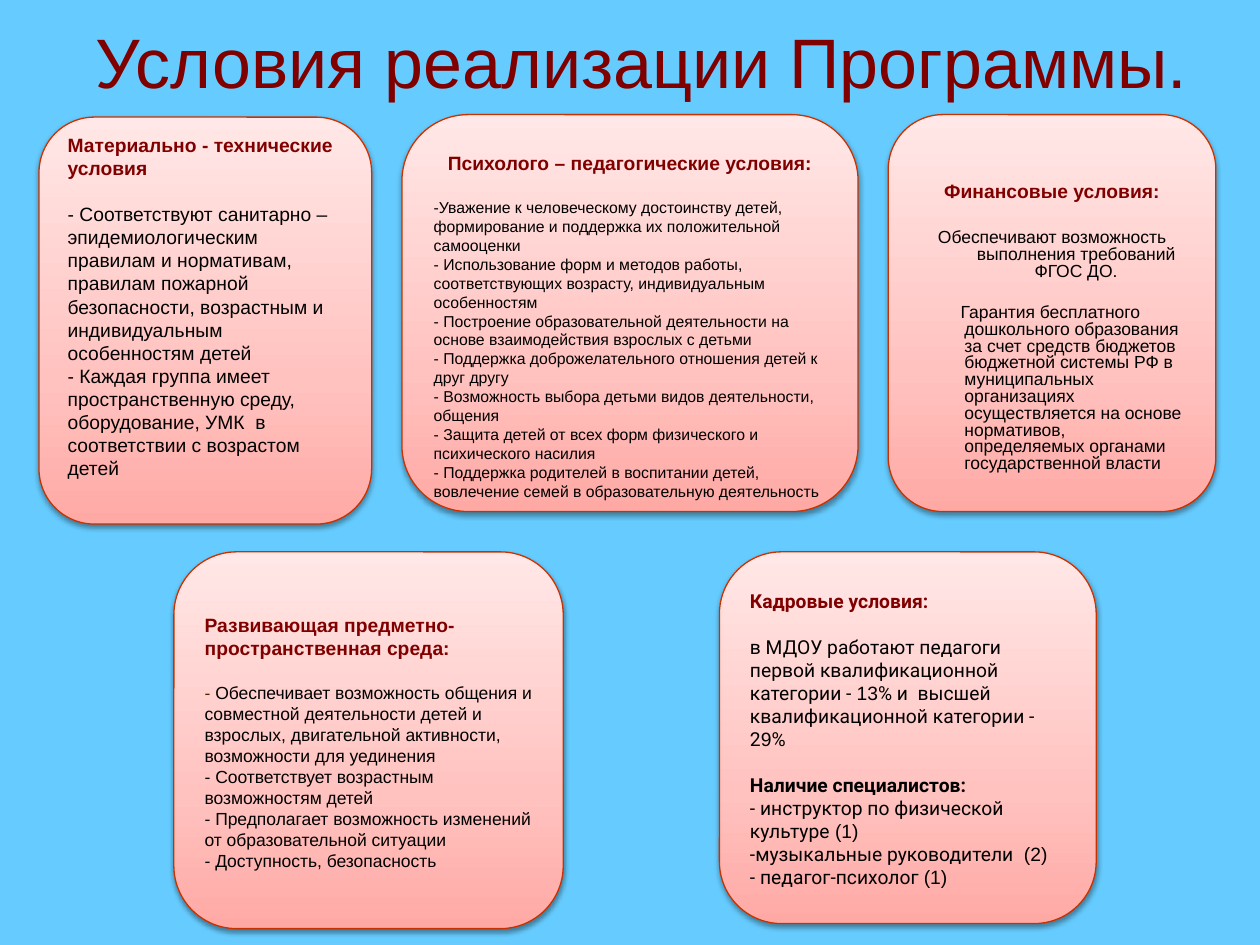
from lxml import etree
from pptx import Presentation
from pptx.dml.color import RGBColor
from pptx.enum import shapes, text
from pptx.oxml import ns
from pptx.util import Inches, Pt

COLORS = {"sky": "66CCFF", "maroon": "800000", "black": "000000", "brown": "5C1F00",
          "border": "C83200"}
GRADIENT = [(0, "FFA9A5"), (35, "FFC2BF"), (100, "FFE8E7")]
LEFT, CENTER = text.PP_ALIGN.LEFT, text.PP_ALIGN.CENTER
HANGING = 0.38


def rgb(name):
    return RGBColor.from_string(COLORS[name])


def add_color(parent, value):
    return etree.SubElement(parent, ns.qn("a:srgbClr"), val=value)


def style_card(s):
    """Apply the pink gradient, thin border and soft shadow."""
    s.fill.gradient()
    s.fill.gradient_angle = 90
    stops = s._element.spPr.find(".//" + ns.qn("a:gsLst"))
    for stop in list(stops):
        stops.remove(stop)
    for pos, value in GRADIENT:
        add_color(etree.SubElement(stops, ns.qn("a:gs"), pos=str(pos * 1000)), value)
    s.line.color.rgb = rgb("border")
    s.line.width = Pt(0.75)
    s.shadow.inherit = False
    effects = s._element.spPr.find(ns.qn("a:effectLst"))
    shadow = etree.SubElement(effects, ns.qn("a:outerShdw"), blurRad=str(Pt(3.1)),
                              dist=str(Pt(1.6)), dir="5400000", rotWithShape="0")
    etree.SubElement(add_color(shadow, COLORS["black"]), ns.qn("a:alpha"), val="38000")


def add_card(slide, box, top_inset):
    """Add a rounded card and return its text frame."""
    s = slide.shapes.add_shape(shapes.MSO_SHAPE.ROUNDED_RECTANGLE, *map(Inches, box))
    style_card(s)
    tf = s.text_frame
    tf.word_wrap = True
    tf.vertical_anchor = text.MSO_ANCHOR.TOP
    tf.margin_top, tf.margin_bottom = Inches(top_inset), 0
    return tf


def add_paragraph(tf, *pieces, size=11, color="black", bold=False, font="Arial",
                  align=LEFT, before=0):
    """Add a paragraph; a piece is a string or (string, other font)."""
    p = tf.paragraphs[0]
    if p.runs:
        p = tf.add_paragraph()
    p.alignment = align
    p.space_before = Pt(before)
    p.font.size, p.font.bold = Pt(size), bold
    p.font.name, p.font.color.rgb = font, rgb(color)
    for piece in pieces:
        words, other = (piece, None) if isinstance(piece, str) else piece
        r = p.add_run()
        r.text = words
        if other:
            r.font.name = other
    return p


def add_heading(tf, words, **style):
    return add_paragraph(tf, words, color="maroon", bold=True, **style)


def add_list(tf, items, size):
    """Add lines of one size, set apart from the heading above."""
    return [add_paragraph(tf, item, size=size, before=0 if i else 13)
            for i, item in enumerate(items)]


def set_hanging(p, first=-HANGING):
    p.line_spacing = 0.8
    pPr = p._p.get_or_add_pPr()
    pPr.set("marL", str(Inches(HANGING)))
    pPr.set("indent", str(Inches(first)))


def add_title(slide):
    s = slide.shapes.add_textbox(*map(Inches, (0.59, 0.21, 9, 0.54)))
    tf = s.text_frame
    tf.word_wrap = True
    tf.vertical_anchor = text.MSO_ANCHOR.MIDDLE
    add_paragraph(tf, "Условия реализации Программы.", size=40, color="maroon", align=CENTER)


def add_material(slide):
    tf = add_card(slide, (0.31, 0.93, 2.64, 3.23), 0)
    add_heading(tf, "Материально - технические условия")
    add_list(tf, [
        "- Соответствуют санитарно – эпидемиологическим правилам и нормативам, правилам "
        "пожарной безопасности, возрастным и индивидуальным особенностям детей",
        "- Каждая группа имеет пространственную среду, оборудование, УМК  в соответствии "
        "с возрастом детей"], 11)


def add_psychological(slide):
    tf = add_card(slide, (3.19, 0.91, 3.62, 3.15), 0.14)
    add_heading(tf, "Психолого – педагогические условия:", align=CENTER)
    add_list(tf, [
        "-Уважение к человеческому достоинству детей, формирование и поддержка их "
        "положительной самооценки",
        "- Использование форм и методов работы, соответствующих возрасту, индивидуальным "
        "особенностям",
        "- Построение образовательной деятельности на основе взаимодействия взрослых с детьми",
        "- Поддержка доброжелательного отношения детей к друг другу",
        "- Возможность выбора детьми видов деятельности, общения",
        "- Защита детей от всех форм физического и психического насилия",
        "- Поддержка родителей в воспитании детей, вовлечение семей в образовательную "
        "деятельность"], 9)


def add_financial(slide):
    tf = add_card(slide, (7.05, 0.91, 2.6, 3.15), 0.42)
    set_hanging(add_heading(tf, "Финансовые условия:", align=CENTER))
    set_hanging(add_paragraph(
        tf, "Обеспечивают возможность выполнения требований ФГОС ДО.",
        size=10, align=CENTER, before=16))
    set_hanging(add_paragraph(
        tf, "Гарантия бесплатного дошкольного образования за счет средств бюджетов бюджетной "
        "системы РФ в муниципальных организациях осуществляется на основе нормативов, "
        "определяемых органами государственной власти", size=10, before=14), first=-0.03)


def add_environment(slide):
    tf = add_card(slide, (1.38, 4.38, 3.09, 2.99), 0.34)
    add_heading(tf, "Развивающая предметно-пространственная среда:")
    first = add_paragraph(
        tf, "- ", "Обеспечивает возможность общения и совместной деятельности детей и взрослых, "
        "двигательной активности, возможности для уединения", size=10, before=13)
    first.runs[0].font.color.rgb = rgb("brown")
    for item in ("- Соответствует возрастным возможностям детей",
                 "- Предполагает возможность изменений от образовательной ситуации",
                 "- Доступность, безопасность"):
        add_paragraph(tf, item, size=10)


def add_staff(slide):
    tf = add_card(slide, (5.71, 4.38, 2.99, 2.95), 0.15)
    add_heading(tf, "Кадровые условия:", font="Roboto")
    add_paragraph(tf, "в МДОУ работают педагоги первой квалификационной категории - ",
                  ("13", "Arial"), "% и  высшей квалификационной категории - 2",
                  ("9", "Arial"), "%", font="Roboto", before=13)
    add_paragraph(tf, "Наличие специалистов:", font="Roboto", bold=True, before=13)
    for role, count in (("- инструктор по физической культуре", " (1)"),
                        ("-музыкальные руководители ", " (2)"),
                        ("- педагог-психолог ", "(1)")):
        add_paragraph(tf, role, (count, "Arial"), font="Roboto")


def main():
    prs = Presentation()
    prs.slide_width, prs.slide_height = Inches(10), Inches(7.5)
    slide = prs.slides.add_slide(prs.slide_layouts[6])
    slide.background.fill.solid()
    slide.background.fill.fore_color.rgb = rgb("sky")
    add_title(slide)
    for add_block in (add_material, add_psychological, add_financial, add_environment,
                      add_staff):
        add_block(slide)
    prs.save("out.pptx")


if __name__ == "__main__":
    main()
